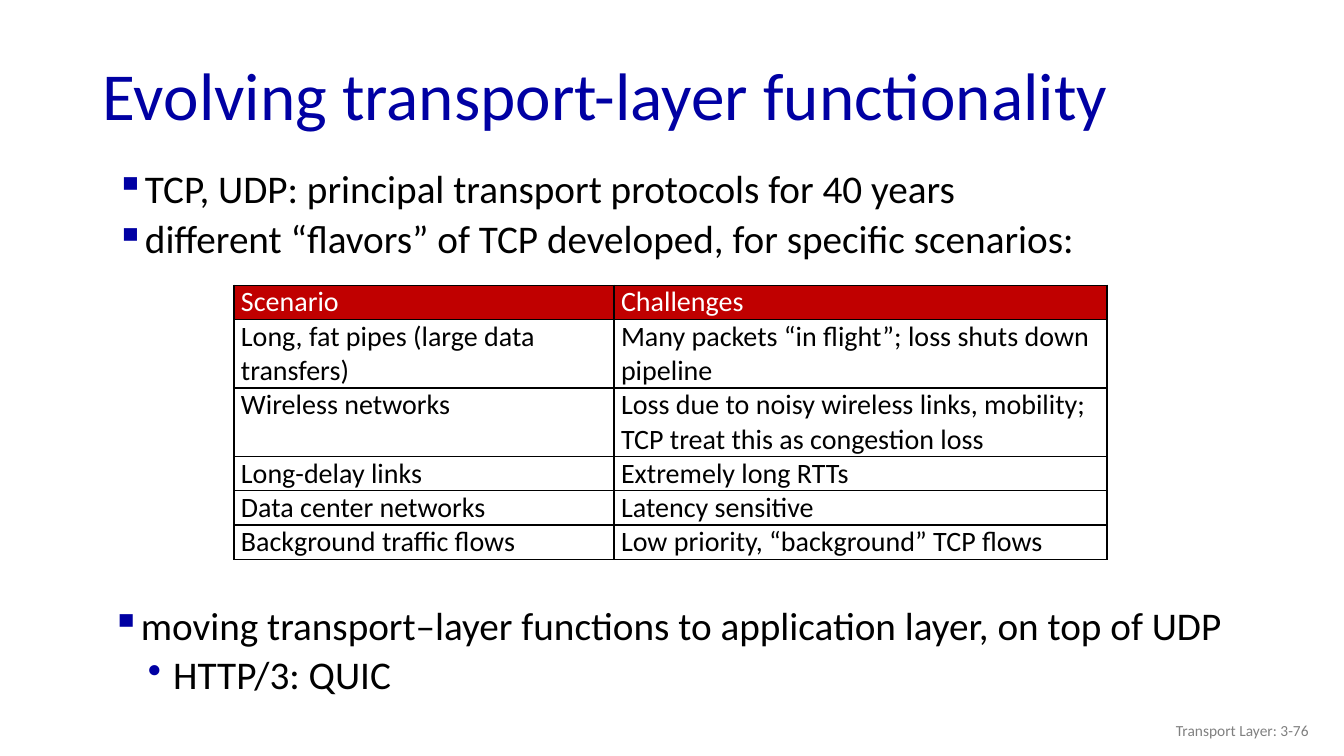
import pptx
import pptx.util
import pptx.dml.color
import pptx.enum.text
import pptx.oxml
import pptx.oxml.ns

Inches, Pt = pptx.util.Inches, pptx.util.Pt
ALIGN, ANCHOR = pptx.enum.text.PP_ALIGN, pptx.enum.text.MSO_ANCHOR

# Content
COLORS = {"blue": "0000A3", "black": "000000", "white": "FFFFFF",
          "red": "C00000", "gray": "808080"}
FONT = "Calibri"
TITLE = "Evolving transport-layer functionality"
FOOTER = "Transport Layer: 3-76"
# Each bullet: level, text
HISTORY = [(0, "TCP, UDP: principal transport protocols for 40 years"),
           (0, "different “flavors” of TCP developed, for specific scenarios:")]
OUTLOOK = [(0, "moving transport–layer functions to application layer, on top of UDP"),
           (1, "HTTP/3: QUIC")]
# Each level: bullet, left margin, first-line indent
LEVELS = [("▪", 0.39, -0.24), ("•", 0.76, -0.25)]
# Each row: lines of text, scenario, challenges
SCENARIOS = [
    (1, "Scenario", "Challenges"),
    (2, "Long, fat pipes (large data transfers)",
     "Many packets “in flight”; loss shuts down pipeline"),
    (2, "Wireless networks",
     "Loss due to noisy wireless links, mobility; TCP treat this as congestion loss"),
    (1, "Long-delay links", "Extremely long RTTs"),
    (1, "Data center networks", "Latency sensitive"),
    (1, "Background traffic flows", "Low priority, “background” TCP flows"),
]
COLUMN_WIDTHS = [3.77, 4.89]
LINE_HEIGHT = 0.34


def rgb(name):
    return pptx.dml.color.RGBColor.from_string(COLORS[name])


def style(para, size, color):
    for span in para.runs:
        span.font.name = FONT
        span.font.size = Pt(size)
        span.font.color.rgb = rgb(color)


def add_text(slide, place, lines, size, color, anchor=ANCHOR.TOP):
    box = slide.shapes.add_textbox(*[Inches(length) for length in place])
    frame = box.text_frame
    frame.word_wrap = True
    frame.vertical_anchor = anchor
    frame.text = "\n".join(lines)
    for para in frame.paragraphs:
        style(para, size, color)
    return frame


def add_xml(parent, xml, index=None):
    head, rest = xml.split(" ", 1)
    element = pptx.oxml.parse_xml(f"{head} {pptx.oxml.ns.nsdecls('a')} {rest}")
    parent.insert(len(parent) if index is None else index, element)


def add_bullets(slide, place, items, gap):
    frame = add_text(slide, place, [text for _, text in items], 28, "black")
    for para, (level, _) in zip(frame.paragraphs, items):
        bullet, margin, indent = LEVELS[level]
        para.level = level
        para.line_spacing = 0.9
        para.space_before = Pt(gap)
        properties = para._p.get_or_add_pPr()
        properties.set("marL", str(Inches(margin)))
        properties.set("indent", str(Inches(indent)))
        add_xml(properties, f'<a:buClr ><a:srgbClr val="{COLORS["blue"]}"/></a:buClr>')
        add_xml(properties, f'<a:buChar char="{bullet}"/>')


def add_scenarios(slide, left, top):
    lines = sum(row[0] for row in SCENARIOS)
    table = slide.shapes.add_table(
        len(SCENARIOS), len(COLUMN_WIDTHS), Inches(left), Inches(top),
        Inches(sum(COLUMN_WIDTHS)), Inches(LINE_HEIGHT * lines)).table
    for column, width in zip(table.columns, COLUMN_WIDTHS):
        column.width = Inches(width)
    for r, (line_count, *texts) in enumerate(SCENARIOS):
        table.rows[r].height = Inches(LINE_HEIGHT * line_count)
        for c, text in enumerate(texts):
            cell = table.cell(r, c)
            cell.margin_left = cell.margin_right = Inches(0.07)
            cell.margin_top = cell.margin_bottom = 0
            cell.text_frame.text = text
            para = cell.text_frame.paragraphs[0]
            style(para, 20, "black" if r else "white")
            para.runs[0].font.bold = False
            if r:
                cell.fill.background()
            else:
                cell.fill.solid()
                cell.fill.fore_color.rgb = rgb("red")
            for index, side in enumerate("LRTB"):
                add_xml(cell._tc.get_or_add_tcPr(),
                        f'<a:ln{side} w="{Pt(1)}"><a:solidFill><a:srgbClr '
                        f'val="{COLORS["black"]}"/></a:solidFill></a:ln{side}>', index)


deck = pptx.Presentation()
deck.slide_width, deck.slide_height = Inches(13.33), Inches(7.5)
page = deck.slides.add_slide(deck.slide_layouts[6])

# Title
title = add_text(page, (0.92, 0.49, 11.5, 0.98), [TITLE], 48, "blue", ANCHOR.MIDDLE)
title.paragraphs[0].line_spacing = 0.9

# Bullets around the table
add_bullets(page, (0.9, 1.63, 11.5, 1.08), HISTORY, 6)
add_bullets(page, (0.86, 5.97, 11.5, 1.07), OUTLOOK, 5)
add_scenarios(page, 2.32, 2.83)

# Footer
footer = add_text(page, (10.08, 7.05, 3, 0.4), [FOOTER], 11, "gray", ANCHOR.MIDDLE)
footer.paragraphs[0].alignment = ALIGN.RIGHT

deck.save("out.pptx")
